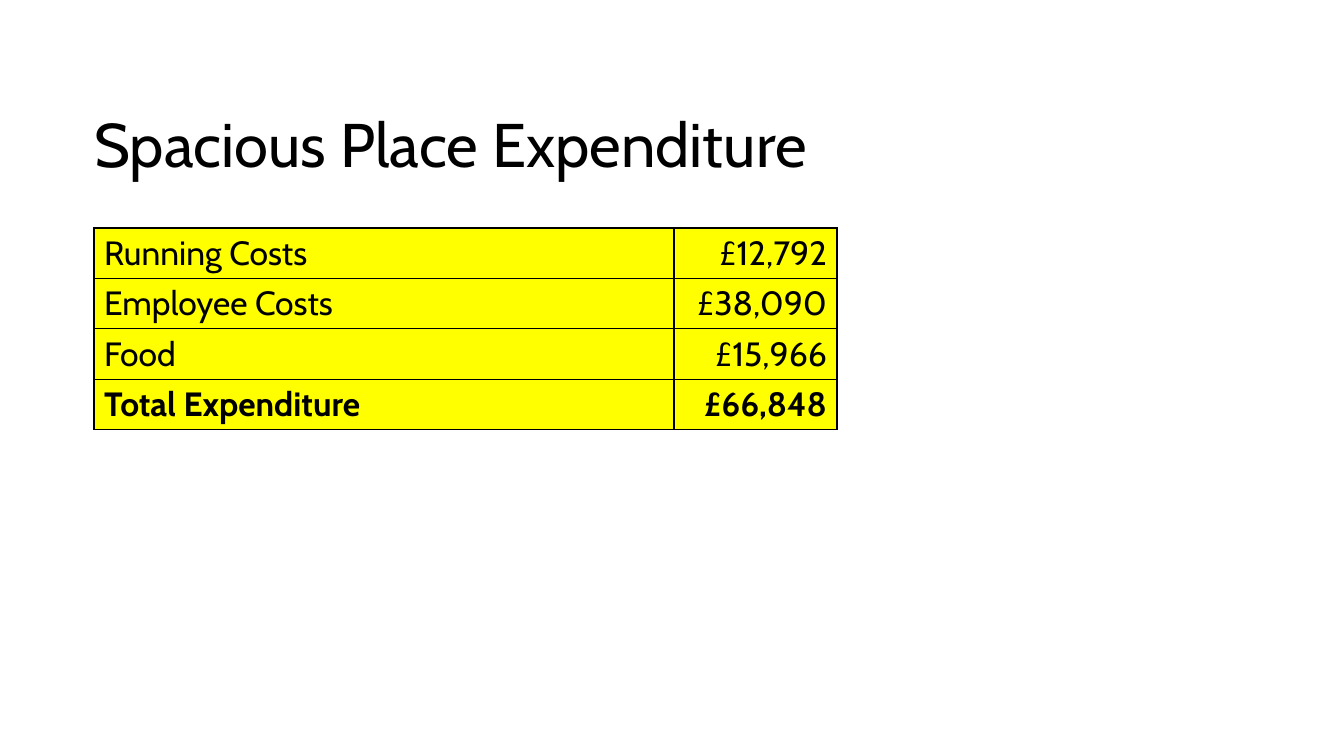
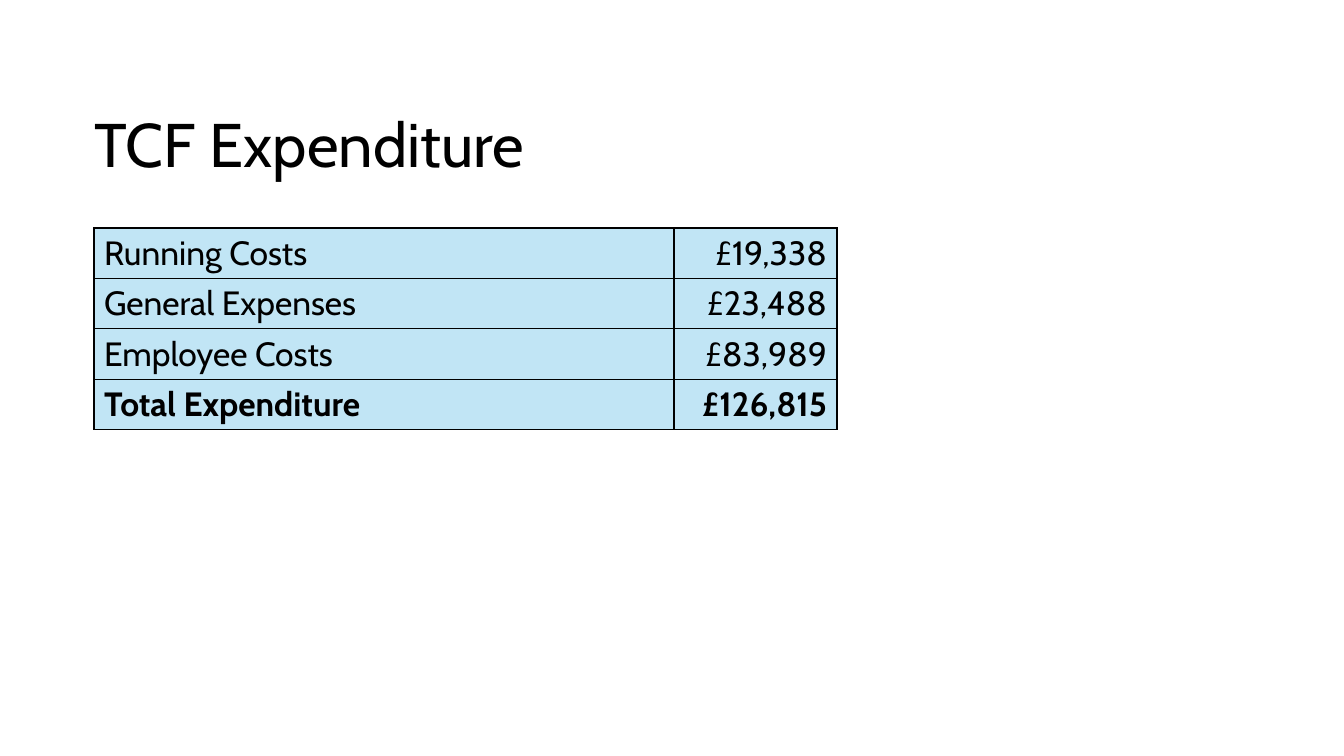
from lxml import etree
from pptx import Presentation
from pptx.dml.color import RGBColor
from pptx.enum.text import MSO_ANCHOR, MSO_AUTO_SIZE, PP_ALIGN
from pptx.oxml.ns import qn
from pptx.util import Emu, Pt

LEFT, RIGHT = PP_ALIGN.LEFT, PP_ALIGN.RIGHT
TOP = MSO_ANCHOR.TOP
GROW = MSO_AUTO_SIZE.SHAPE_TO_FIT_TEXT

BLACK = RGBColor(0x00, 0x00, 0x00)
YELLOW = RGBColor(0xFF, 0xFF, 0x00)
PALE_BLUE = RGBColor(0xC1, 0xE5, 0xF5)

PX_PER_INCH = 100.8
TITLE_ONLY = 5


def px(length):
    return Emu(round(length * 914400 / PX_PER_INCH))


class Deck:
    """Holds the shared style and the slide being built."""

    font_name = "Cabin"
    title_size, cell_size = Pt(44), Pt(24)
    border_width = Pt(1)
    title_box = (84, 101, 935, 85)
    table_left, table_top, row_height = 94, 228, 50
    column_widths = (580, 163)

    def __init__(self):
        self.presentation = Presentation()
        self.presentation.slide_width = px(1344)
        self.presentation.slide_height = px(756)
        self.slide = None

    def add_slide(self, heading):
        layout = self.presentation.slide_layouts[TITLE_ONLY]
        self.slide = self.presentation.slides.add_slide(layout)
        title = self.slide.shapes.title
        title.left, title.top, title.width, title.height = map(px, self.title_box)
        frame = title.text_frame
        frame.vertical_anchor = TOP
        frame.auto_size = GROW
        self.set_text(frame, heading, self.title_size)

    def set_text(self, frame, text, size, align=LEFT, bold=False):
        frame.text = text
        paragraph = frame.paragraphs[0]
        paragraph.alignment = align
        font = paragraph.font
        font.name, font.size, font.bold = self.font_name, size, bold
        font.color.rgb = BLACK

    def add_cost_table(self, costs, fill):
        """Draw one row per cost, the last one being the bold total."""
        table = self.slide.shapes.add_table(
            len(costs), len(self.column_widths),
            px(self.table_left), px(self.table_top),
            px(sum(self.column_widths)), px(self.row_height * len(costs)),
        ).table
        table.first_row = table.horz_banding = False
        for column, width in zip(table.columns, self.column_widths):
            column.width = px(width)
        for row_index, cost in enumerate(costs):
            is_total = row_index == len(costs) - 1
            for column_index, (text, align) in enumerate(zip(cost, (LEFT, RIGHT))):
                cell = table.cell(row_index, column_index)
                self.set_text(cell.text_frame, text, self.cell_size, align, is_total)
                self.add_borders(cell)
                cell.fill.solid()
                cell.fill.fore_color.rgb = fill

    def add_borders(self, cell):
        """Outline the cell; call before filling it, as lines precede the fill."""
        properties = cell._tc.get_or_add_tcPr()
        for side in ("a:lnL", "a:lnR", "a:lnT", "a:lnB"):
            line = etree.SubElement(properties, qn(side), w=str(self.border_width))
            solid = etree.SubElement(line, qn("a:solidFill"))
            etree.SubElement(solid, qn("a:srgbClr"), val=str(BLACK))


def main():
    deck = Deck()

    deck.add_slide("Spacious Place Expenditure")
    deck.add_cost_table([
        ("Running Costs", "£12,792"),
        ("Employee Costs", "£38,090"),
        ("Food", "£15,966"),
        ("Total Expenditure", "£66,848"),
    ], YELLOW)

    deck.add_slide("TCF Expenditure")
    deck.add_cost_table([
        ("Running Costs", "£19,338"),
        ("General Expenses", "£23,488"),
        ("Employee Costs", "£83,989"),
        ("Total Expenditure", "£126,815"),
    ], PALE_BLUE)

    deck.presentation.save("out.pptx")


if __name__ == "__main__":
    main()
